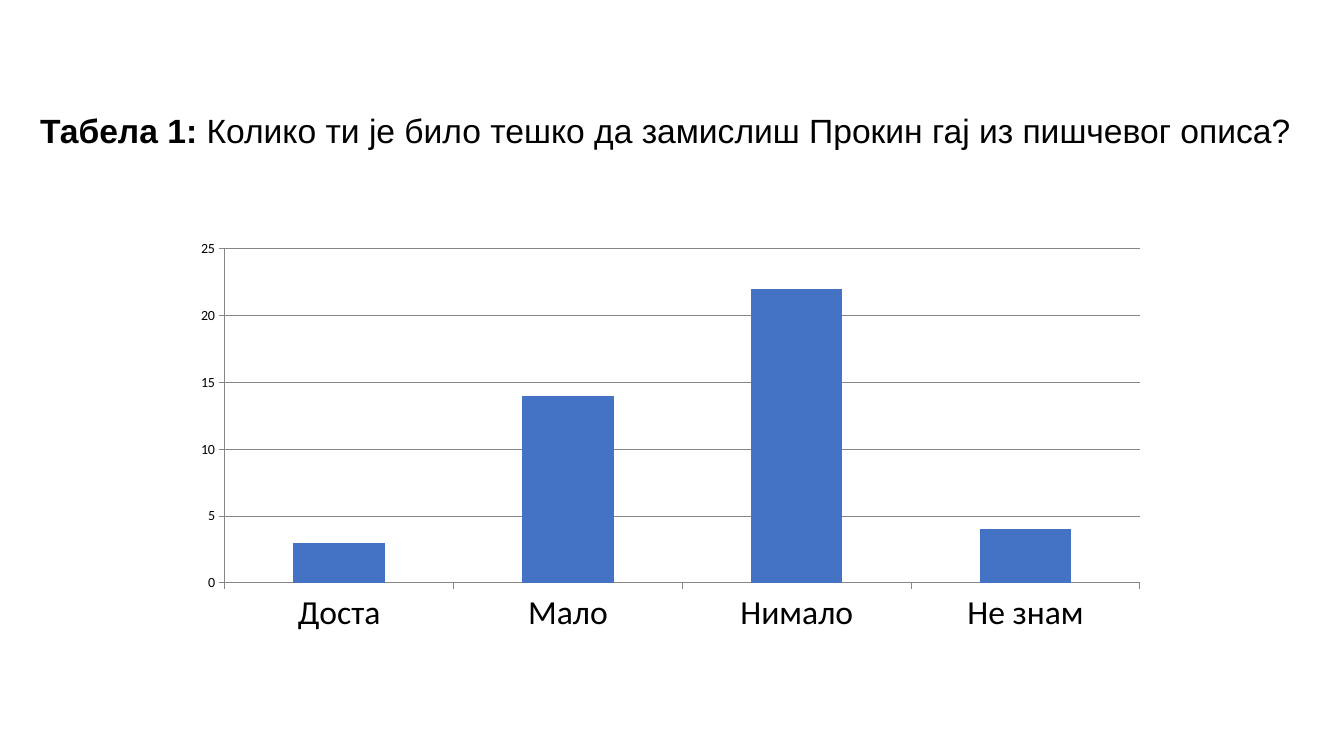
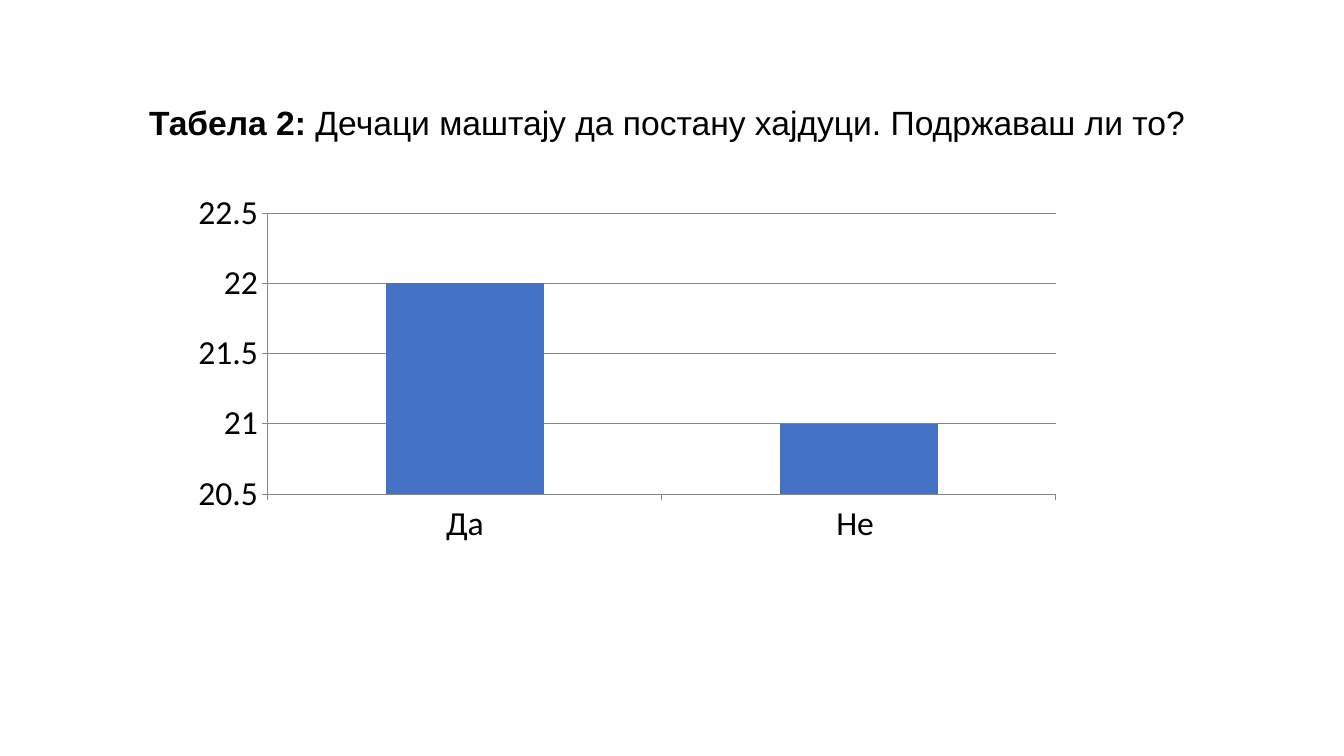
from pptx import Presentation
from pptx.chart.data import CategoryChartData
from pptx.dml.color import RGBColor
from pptx.enum.chart import XL_CHART_TYPE, XL_TICK_MARK
from pptx.enum.text import MSO_ANCHOR, MSO_AUTO_SIZE, PP_ALIGN
from pptx.util import Inches, Pt

BLACK, BLUE, GRAY = "000000", "4472C4", "868686"

QUESTION_FRAME = {
    "word_wrap": False,
    "auto_size": MSO_AUTO_SIZE.SHAPE_TO_FIT_TEXT,
    "vertical_anchor": MSO_ANCHOR.MIDDLE,
}
QUESTION_FONT = {"name": "Arial", "size": Pt(24)}

SURVEY = [
    {
        "label": "Табела 1:",
        "question": " Колико ти је било тешко да замислиш Прокин гај из пишчевог описа?",
        "question_box": (0.3, 1.04, 12.72, 0.5),
        "answers": {"Доста": 3, "Мало": 14, "Нимало": 22, "Не знам": 4},
        "answers_box": (1.8, 2.31, 9.7, 4.06),
        "scale": {"minimum_scale": 0, "maximum_scale": 25, "major_unit": 5},
        "scale_size": 10,
    },
    {
        "label": "Табела 2:",
        "question": " Дечаци маштају да постану хајдуци. Подржаваш ли то?",
        "question_box": (1.38, 0.96, 10.58, 0.5),
        "answers": {"Да": 22, "Не ": 21},
        "answers_box": (1.79, 1.84, 8.86, 3.64),
        "scale": {"minimum_scale": 20.5, "maximum_scale": 22.5, "major_unit": 0.5},
        "scale_size": 24,
    },
]


def apply(target, values):
    for name, value in values.items():
        setattr(target, name, value)


def paint(color_format, color):
    color_format.rgb = RGBColor.from_string(color)


def style_line(line):
    paint(line.color, GRAY)
    line.width = Pt(0.75)


def style_font(font, values, color=BLACK):
    apply(font, values)
    paint(font.color, color)


def style_axis(axis, size):
    apply(axis, {"major_tick_mark": XL_TICK_MARK.OUTSIDE,
                 "minor_tick_mark": XL_TICK_MARK.NONE})
    style_line(axis.format.line)
    style_font(axis.tick_labels.font, {"name": "Calibri", "size": Pt(size)})


def add_question(slide, box, label, question):
    frame = slide.shapes.add_textbox(*map(Inches, box)).text_frame
    apply(frame, QUESTION_FRAME)
    paragraph = frame.paragraphs[0]
    paragraph.alignment = PP_ALIGN.JUSTIFY
    for text, bold in ((label, True), (question, False)):
        run = paragraph.add_run()
        run.text = text
        style_font(run.font, QUESTION_FONT | {"bold": bold})


def add_answers(slide, box, answers, scale, scale_size):
    counts = CategoryChartData()
    counts.categories = list(answers)
    counts.add_series("Series 1", list(answers.values()))
    chart = slide.shapes.add_chart(
        XL_CHART_TYPE.COLUMN_CLUSTERED, *map(Inches, box), counts).chart
    apply(chart, {"has_legend": False, "has_title": False})
    style_font(chart.font, {"name": "Calibri", "size": Pt(scale_size)})

    plot = chart.plots[0]
    apply(plot, {"gap_width": 150, "vary_by_categories": False})
    bars = plot.series[0].format.fill
    bars.solid()
    paint(bars.fore_color, BLUE)

    style_axis(chart.category_axis, 24)
    style_axis(chart.value_axis, scale_size)
    apply(chart.value_axis, scale | {"has_major_gridlines": True})
    style_line(chart.value_axis.major_gridlines.format.line)


def add_survey_slide(deck, entry):
    slide = deck.slides.add_slide(deck.slide_layouts[6])
    add_answers(slide, entry["answers_box"], entry["answers"],
                entry["scale"], entry["scale_size"])
    add_question(slide, entry["question_box"], entry["label"], entry["question"])


def main():
    deck = Presentation()
    apply(deck, {"slide_width": Inches(13.33), "slide_height": Inches(7.5)})
    for entry in SURVEY:
        add_survey_slide(deck, entry)
    deck.save("out.pptx")


if __name__ == "__main__":
    main()
